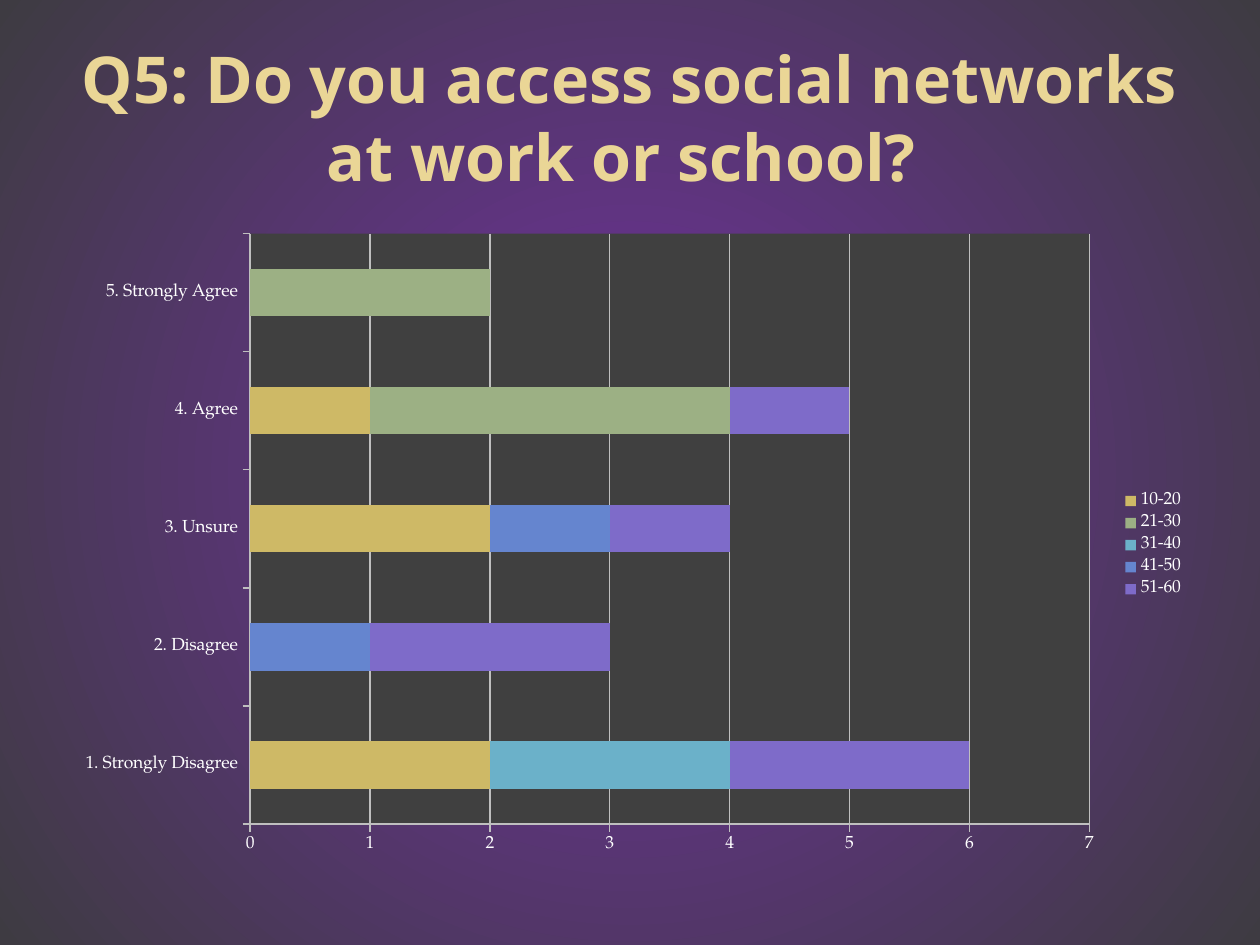
from lxml.etree import SubElement
from pptx import Presentation
from pptx.chart.data import CategoryChartData
from pptx.dml.color import RGBColor
from pptx.enum.chart import XL_CHART_TYPE, XL_LEGEND_POSITION, XL_TICK_MARK
from pptx.enum.text import MSO_ANCHOR, PP_ALIGN
from pptx.oxml import parse_xml
from pptx.oxml.ns import nsdecls, qn
from pptx.util import Cm, Pt

HUES = {
    "core": "7030A0", "edge": "3E3B42", "title": "EAD696",
    "text": "FFFFFF", "grid": "BFBFBF", "plot": "404040",
    "10-20": "CEB966", "21-30": "9CB084", "31-40": "6BB1C9",
    "41-50": "6585CF", "51-60": "7E6BC9",
}
CATS = ["1. Strongly Disagree", "2. Disagree", "3. Unsure", "4. Agree", "5. Strongly Agree"]
VOTES = {
    "10-20": (2, 0, 2, 1, 0),
    "21-30": (0, 0, 0, 3, 2),
    "31-40": (2, 0, 0, 0, 0),
    "41-50": (0, 1, 1, 0, 0),
    "51-60": (2, 2, 1, 1, 0),
}


def hue(name):
    return RGBColor.from_string(HUES[name])


def write(frame, text, size=10, font="Open Sans", color="text", bold=False, align=PP_ALIGN.CENTER):
    para = frame.paragraphs[0]
    para.alignment = align
    run = para.add_run()
    run.text = text
    run.font.size, run.font.name, run.font.bold = Pt(size), font, bold
    run.font.color.rgb = hue(color)


class Deck:
    """Holds the style and the current slide."""

    def __init__(self):
        self.show = Presentation()
        self.show.slide_width, self.show.slide_height = Cm(25.4), Cm(19.05)
        self.slide = self.show.slides.add_slide(self.show.slide_layouts[6])
        self.font = "TeX Gyre Pagella"

    def back(self, *names):
        fill = self.slide.background.fill
        fill.gradient()
        for stop, name in zip(fill.gradient_stops, names):
            stop.color.rgb = hue(name)
        grad = self.slide._element.find(".//" + qn("a:gradFill"))
        grad.replace(grad.find(qn("a:lin")), parse_xml(
            f'<a:path {nsdecls("a")} path="circle">'
            '<a:fillToRect l="50000" t="50000" r="50000" b="50000"/></a:path>'))

    def title(self, text, *box):
        frame = self.slide.shapes.add_textbox(*map(Cm, box)).text_frame
        frame.word_wrap = True
        frame.vertical_anchor = MSO_ANCHOR.MIDDLE
        write(frame, text, size=36.9, color="title", bold=True)

    def axis(self, axis, grid):
        axis.major_tick_mark = XL_TICK_MARK.OUTSIDE
        axis.minor_tick_mark = XL_TICK_MARK.NONE
        axis.has_major_gridlines = grid
        lines = [axis.format.line]
        if grid:
            lines.append(axis.major_gridlines.format.line)
        for line in lines:
            line.color.rgb = hue("grid")
            line.width = Pt(0.75)

    def bars(self, cats, rows, *box):
        data = CategoryChartData()
        data.categories = cats
        for name, vals in rows.items():
            data.add_series(name, vals)
        chart = self.slide.shapes.add_chart(
            XL_CHART_TYPE.BAR_STACKED, *map(Cm, box), data).chart
        chart.has_title = False
        chart.font.name, chart.font.size = self.font, Pt(10)
        chart.font.color.rgb = hue("text")
        self.axis(chart.category_axis, False)
        self.axis(chart.value_axis, True)
        scale = chart.value_axis
        scale.minimum_scale, scale.maximum_scale, scale.major_unit = 0, 7, 1
        chart.has_legend = True
        chart.legend.position = XL_LEGEND_POSITION.RIGHT
        chart.legend.include_in_layout = False
        plot = chart.plots[0]
        plot.gap_width, plot.overlap, plot.vary_by_categories = 150, 100, False
        for part in plot.series:
            part.format.fill.solid()
            part.format.fill.fore_color.rgb = hue(part.name)
        self.area(chart, x=0.165, y=0.02, w=0.74, h=0.91)

    def area(self, chart, **place):
        area = chart._chartSpace.find(".//" + qn("c:plotArea"))
        for old in area.findall(qn("c:layout")):
            area.remove(old)
        inner = '<c:layoutTarget val="inner"/><c:xMode val="edge"/><c:yMode val="edge"/>'
        inner += "".join(f'<c:{key} val="{val}"/>' for key, val in place.items())
        area.insert(0, parse_xml(
            f'<c:layout {nsdecls("c")}><c:manualLayout>{inner}</c:manualLayout></c:layout>'))
        fill = SubElement(SubElement(area, qn("c:spPr")), qn("a:solidFill"))
        SubElement(fill, qn("a:srgbClr"), val=HUES["plot"])


def main():
    deck = Deck()
    deck.back("core", "edge")
    deck.title("Q5: Do you access social networks at work or school? ", 1.27, 0.76, 22.86, 3.18)
    deck.bars(CATS, VOTES, 1.27, 4.45, 22.86, 13.08)
    deck.show.save("out.pptx")


if __name__ == "__main__":
    main()
